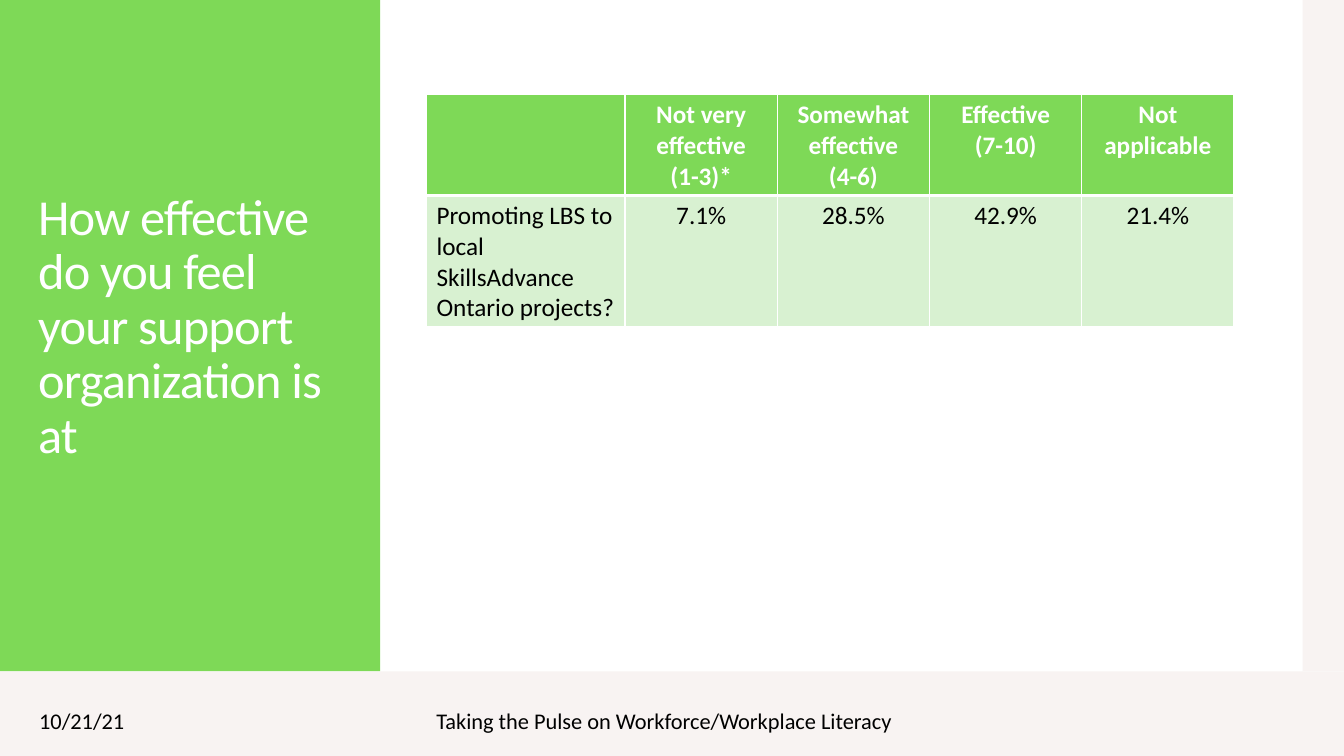
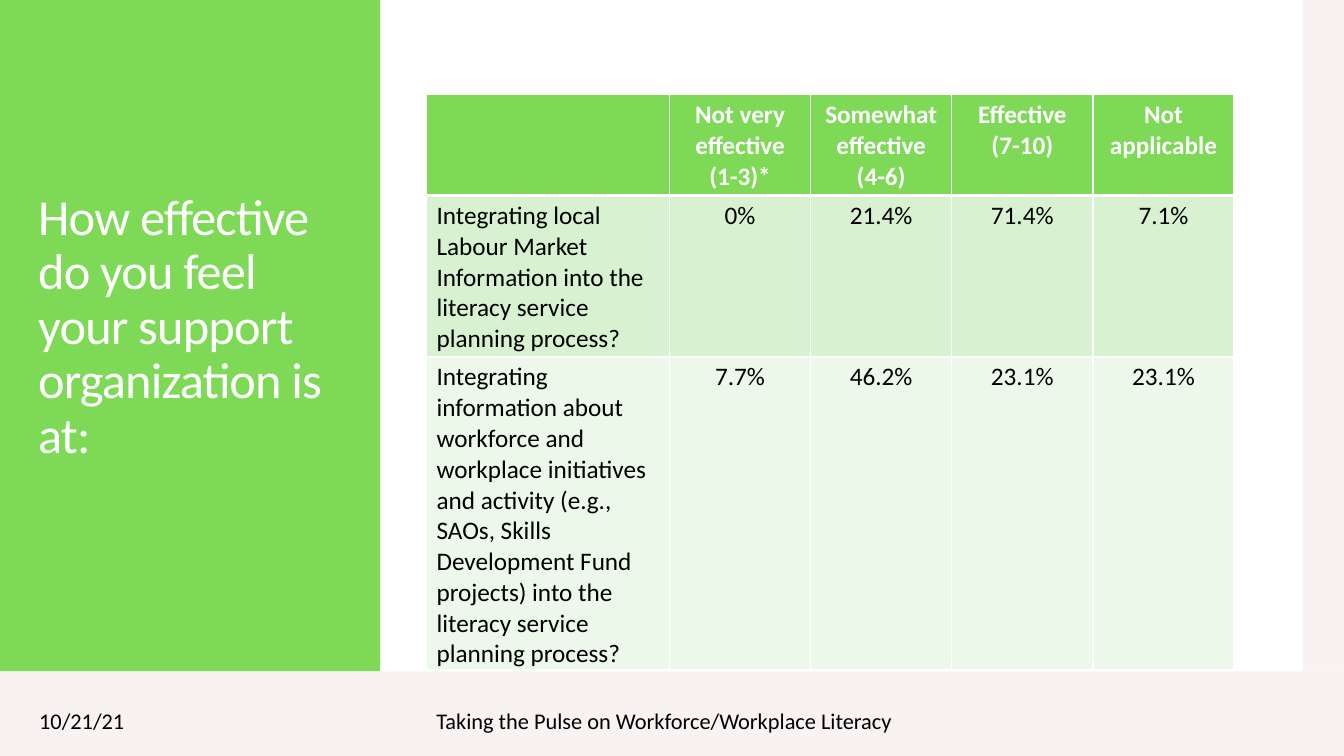
from dataclasses import dataclass

from lxml import etree
from pptx import Presentation, util as u
from pptx.dml.color import RGBColor
from pptx.enum import shapes, text
from pptx.oxml.ns import qn

PX = 9144  # EMU per px, 100 px to the inch


@dataclass(frozen=True)
class Theme:
    font: str = "Calibri"
    green: str = "7ED957"
    sand: str = "F8F3F2"
    white: str = "FFFFFF"
    black: str = "000000"
    bands: tuple = ("D8F1D1", "ECF8EA")
    title_size: int = 36
    table_size: int = 18
    footer_size: int = 16
    thin: int = 1
    thick: int = 3


T = Theme()

# Content
DATE = "10/21/21"
FOOTER = "Taking the Pulse on Workforce/Workplace Literacy"
HEADER = ["", "Not very effective\n(1-3)*", "Somewhat effective\n(4-6)",
          "Effective\n(7-10)", "Not applicable"]
SLIDES = [
    ("How effective do you feel your support organization is at", [197] + [151] * 4, [
        ["Promoting LBS to local SkillsAdvance Ontario projects?",
         "7.1%", "28.5%", "42.9%", "21.4%"],
    ]),
    ("How effective do you feel your support organization is at:", [241] + [140] * 4, [
        ["Integrating local Labour Market Information into the literacy "
         "service planning process?", "0%", "21.4%", "71.4%", "7.1%"],
        ["Integrating information about workforce and workplace initiatives and "
         "activity (e.g., SAOs, Skills Development Fund projects) into the "
         "literacy service planning process?", "7.7%", "46.2%", "23.1%", "23.1%"],
    ]),
]


def box(*lengths):
    return [n * PX for n in lengths]


def style_text(tf, size, color, bold=False, align=None):
    for p in tf.paragraphs:
        p.alignment = align
        p.font.size = u.Pt(size)
        for r in p.runs:
            r.font.name = T.font
            r.font.size = u.Pt(size)
            r.font.bold = bold
            r.font.color.rgb = RGBColor.from_string(color)


def add_band(s, bounds, color):
    sp = s.shapes.add_shape(shapes.MSO_SHAPE.RECTANGLE, *box(*bounds))
    sp.shadow.inherit = False
    sp.fill.solid()
    sp.fill.fore_color.rgb = RGBColor.from_string(color)
    sp.line.fill.background()


def add_text(s, bounds, words, size, color):
    tf = s.shapes.add_textbox(*box(*bounds)).text_frame
    tf.word_wrap = True
    tf.vertical_anchor = text.MSO_ANCHOR.MIDDLE
    tf.text = words
    style_text(tf, size, color)
    return tf


def add_title(s, words):
    p = add_text(s, (28, 25, 322, 601), words, T.title_size, T.white).paragraphs[0]
    p.line_spacing = 0.9
    for r in p.runs:
        r.font._element.set("spc", "-60")


def set_borders(cell, top, bottom):
    tcPr = cell._tc.get_or_add_tcPr()
    widths = {"a:lnL": T.thin, "a:lnR": T.thin, "a:lnT": top, "a:lnB": bottom}
    for tag, width in widths.items():
        ln = etree.SubElement(tcPr, qn(tag), w=str(u.Pt(width)))
        fill = etree.SubElement(ln, qn("a:solidFill"))
        etree.SubElement(fill, qn("a:srgbClr"), val=T.white)


def add_ratings(s, widths, rows):
    rows = [HEADER] + rows
    row_height = 41
    table = s.shapes.add_table(
        len(rows), len(widths),
        *box(423, 94, sum(widths), row_height * len(rows))).table
    table.horz_banding = False
    for column, width in zip(table.columns, widths):
        column.width = width * PX
    for i, values in enumerate(rows):
        table.rows[i].height = row_height * PX
        header = i == 0
        fill = T.green if header else T.bands[(i - 1) % len(T.bands)]
        for j, value in enumerate(values):
            cell = table.cell(i, j)
            cell.text_frame.text = value
            style_text(cell.text_frame, T.table_size,
                       T.white if header else T.black, header,
                       text.PP_ALIGN.CENTER if j else None)
            # The rule under the header is shared with the first body row
            set_borders(cell, T.thick if i == 1 else T.thin,
                        T.thick if header else T.thin)
            cell.fill.solid()
            cell.fill.fore_color.rgb = RGBColor.from_string(fill)


def add_frame(s):
    # Footer band, title panel and right edge
    add_band(s, (-4, 666, 1338, 85), T.sand)
    add_band(s, (0, 0, 377, 666), T.green)
    add_band(s, (1292, 0, 42, 666), T.sand)
    # Footer text
    add_text(s, (29, 695, 300, 40), DATE, T.footer_size, T.black)
    add_text(s, (423, 695, 646, 40), FOOTER, T.footer_size, T.black)


def main():
    prs = Presentation()
    prs.slide_width, prs.slide_height = box(1333, 750)
    blank = prs.slide_layouts[6]
    for title, widths, rows in SLIDES:
        s = prs.slides.add_slide(blank)
        add_frame(s)
        add_title(s, title)
        add_ratings(s, widths, rows)
    prs.save("out.pptx")


if __name__ == "__main__":
    main()
